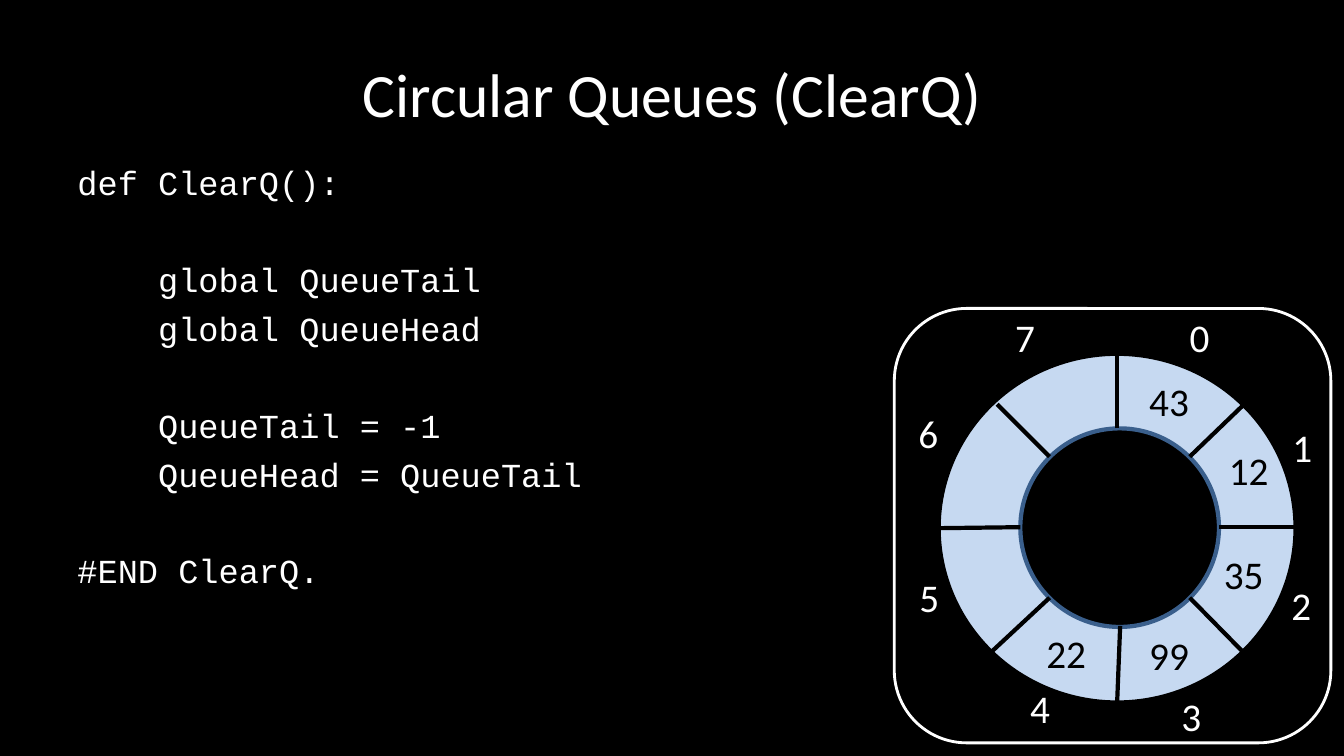
import pptx
import pptx.dml.color
import pptx.enum.shapes
import pptx.enum.text
import pptx.oxml
import pptx.oxml.ns
import pptx.util

Inches = pptx.util.Inches
Pt = pptx.util.Pt
Shapes = pptx.enum.shapes.MSO_SHAPE
Align = pptx.enum.text.PP_ALIGN
Anchor = pptx.enum.text.MSO_ANCHOR

COLORS = {
    "black": "000000",
    "white": "FFFFFF",
    "ring": "C6D9F1",
    "hub_edge": "3A5F8C",
}

CODE_GROUPS = [
    ["def ClearQ():"],
    ["    global QueueTail", "    global QueueHead"],
    ["    QueueTail = -1", "    QueueHead = QueueTail"],
    ["#END ClearQ."],
]
LINE_GAP = 6.45
GROUP_GAP = 40.1

INDEX_POSITIONS = [
    (11.7, 3.06), (12.72, 4.15), (12.71, 5.72), (11.62, 6.82),
    (10.12, 6.74), (9.02, 5.64), (9.01, 4.01), (9.97, 3.06),
]
QUEUE_ITEMS = [
    ("43", 11.3, 3.69),
    ("12", 12.09, 4.38),
    ("35", 12.04, 5.41),
    ("99", 11.3, 6.21),
    ("22", 10.28, 6.19),
]
DIVIDERS = [
    ((10.41, 4.53), (9.89, 4.01)),
    ((11.08, 4.25), (11.08, 3.51)),
    ((11.8, 4.53), (12.33, 4.02)),
    ((12.09, 5.23), (12.85, 5.23)),
    ((11.8, 5.93), (12.33, 6.47)),
    ((11.11, 6.21), (11.08, 6.97)),
    ((10.41, 5.93), (9.83, 6.47)),
    ((10.12, 5.23), (9.31, 5.24)),
]


def color(name):
    return pptx.dml.color.RGBColor.from_string(COLORS[name])


class QueueSlide:
    heading_font = "Calibri"
    code_font = "Courier New"

    def __init__(self, presentation):
        self.slide = presentation.slides.add_slide(presentation.slide_layouts[6])
        background = self.slide.background.fill
        background.solid()
        background.fore_color.rgb = color("black")

    def text_frame(self, left, top, width, height, wrap=True):
        box = self.slide.shapes.add_textbox(
            Inches(left), Inches(top), Inches(width), Inches(height))
        box.text_frame.word_wrap = wrap
        return box.text_frame

    def add_run(self, paragraph, text, size, font, font_color):
        run = paragraph.add_run()
        run.text = text
        run.font.size = Pt(size)
        run.font.name = font
        run.font.color.rgb = color(font_color)

    def title(self, text):
        frame = self.text_frame(0.67, 0.3, 12, 1.25)
        frame.vertical_anchor = Anchor.MIDDLE
        paragraph = frame.paragraphs[0]
        paragraph.alignment = Align.CENTER
        self.add_run(paragraph, text, 44, self.heading_font, "white")

    def code(self, groups):
        frame = self.text_frame(0.67, 1.56, 12, 4.86)
        paragraph = frame.paragraphs[0]
        for group_number, group in enumerate(groups):
            for line_number, line in enumerate(group):
                if group_number or line_number:
                    paragraph = frame.add_paragraph()
                    paragraph.space_before = Pt(LINE_GAP if line_number else GROUP_GAP)
                self.add_run(paragraph, line, 24, self.code_font, "white")

    def label(self, text, left, top, width, font_color):
        frame = self.text_frame(left, top, width, 0.57, wrap=False)
        frame.auto_size = pptx.enum.text.MSO_AUTO_SIZE.SHAPE_TO_FIT_TEXT
        self.add_run(frame.paragraphs[0], text, 28, self.heading_font, font_color)

    def shape(self, kind, left, top, width, height, fill, line, line_width):
        shape = self.slide.shapes.add_shape(
            kind, Inches(left), Inches(top), Inches(width), Inches(height))
        shape.shadow.inherit = False
        if fill:
            shape.fill.solid()
            shape.fill.fore_color.rgb = color(fill)
        else:
            shape.fill.background()
        shape.line.color.rgb = color(line)
        shape.line.width = Pt(line_width)

    def divider(self, start, end):
        connector = self.slide.shapes.add_connector(
            pptx.enum.shapes.MSO_CONNECTOR.STRAIGHT,
            *(Inches(value) for value in start + end))
        connector.line.color.rgb = color("black")
        connector.line.width = Pt(3)
        properties = connector._element.spPr
        properties.append(pptx.oxml.parse_xml(
            "<a:effectLst %s/>" % pptx.oxml.ns.nsdecls("a")))


def main():
    presentation = pptx.Presentation()
    presentation.slide_width = Inches(13.33)
    presentation.slide_height = Inches(7.5)

    page = QueueSlide(presentation)
    page.title("Circular Queues (ClearQ)")
    page.code(CODE_GROUPS)
    page.shape(Shapes.OVAL, 9.31, 3.51, 3.54, 3.46, "ring", "black", 3)
    page.shape(Shapes.OVAL, 10.12, 4.25, 1.97, 1.97, "black", "hub_edge", 3)
    for start, end in DIVIDERS:
        page.divider(start, end)
    for index, (left, top) in enumerate(INDEX_POSITIONS):
        page.label(str(index), left, top, 0.4, "white")
    for item, left, top in QUEUE_ITEMS:
        page.label(item, left, top, 0.6, "black")
    page.shape(Shapes.ROUNDED_RECTANGLE, 8.87, 3.06, 4.33, 4.31, None, "white", 2)

    presentation.save("out.pptx")


if __name__ == "__main__":
    main()
